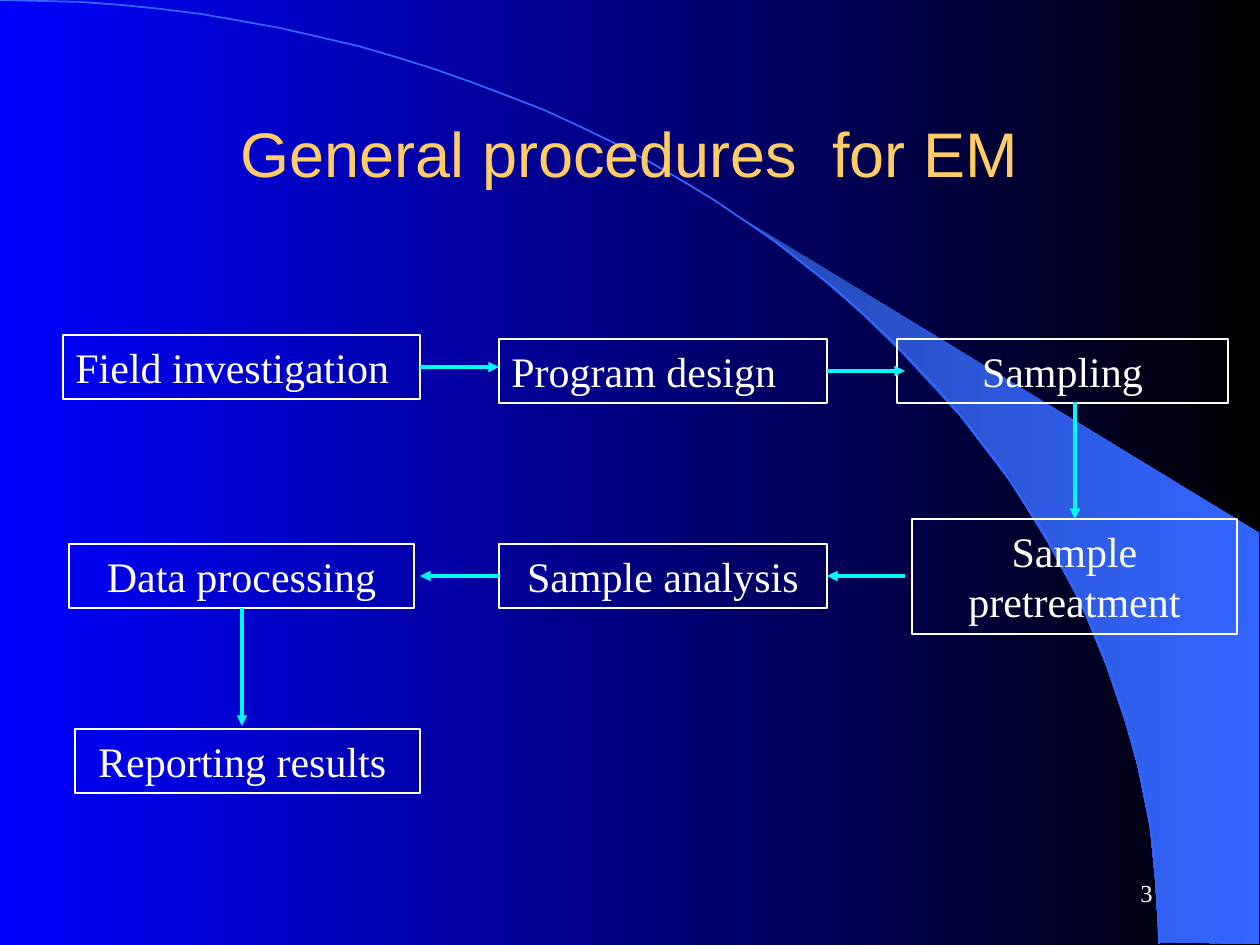
import math

from lxml import etree
from pptx import Presentation
from pptx import util as u
from pptx.dml.color import RGBColor
from pptx.enum import shapes, text
from pptx.oxml import ns

PX = 914400 / 126
BLUE = RGBColor(0x00, 0x00, 0xFF)
BLACK = RGBColor(0x00, 0x00, 0x00)
DEEP = RGBColor(0x24, 0x49, 0xB6)
SKY = RGBColor(0x33, 0x66, 0xFF)
GOLD = RGBColor(0xFF, 0xCC, 0x66)
WHITE = RGBColor(0xFF, 0xFF, 0xFF)
CYAN = RGBColor(0x00, 0xF9, 0xF9)
LEFT, CENTER, RIGHT = text.PP_ALIGN.LEFT, text.PP_ALIGN.CENTER, text.PP_ALIGN.RIGHT


def set_gradient(fill, start, end):
    fill.gradient()
    fill.gradient_angle = 0
    for stop, color in zip(fill.gradient_stops, (start, end)):
        stop.color.rgb = color


def add_text(sp, words, size, font, color, align, anchor):
    tf = sp.text_frame
    tf.word_wrap = True
    tf.vertical_anchor = anchor
    p = tf.paragraphs[0]
    p.alignment = align
    r = p.add_run()
    r.text = words
    r.font.size = u.Pt(size)
    r.font.name = font
    r.font.color.rgb = color


prs = Presentation()
prs.slide_width, prs.slide_height = u.Inches(10), u.Inches(7.5)
s = prs.slides.add_slide(prs.slide_layouts[6])
set_gradient(s.background.fill, BLUE, BLACK)

wedge = [(1159, 942), (1259, 944), (1259, 533), (742, 218), (786, 251), (823, 280),
         (863, 315), (902, 353), (960, 416), (1012, 484), (1048, 543), (1081, 604),
         (1106, 665), (1125, 721), (1138, 767), (1150, 827), (1155, 877)]
fb = s.shapes.build_freeform(*wedge[0], scale=PX)
fb.add_line_segments(wedge[1:], close=True)
sp = fb.convert_to_shape()
sp.shadow.inherit = False
set_gradient(sp.fill, DEEP, SKY)
sp.line.fill.background()

angles = [math.radians(a) for a in range(2, 91, 2)]
arc = [(round(1159 * math.sin(a)), round(944 * (1 - math.cos(a)))) for a in angles]
fb = s.shapes.build_freeform(0, 0, scale=PX)
fb.add_line_segments(arc, close=False)
sp = fb.convert_to_shape()
sp.shadow.inherit = False
sp.fill.background()
sp.line.color.rgb = SKY
sp.line.width = u.Pt(1)

labels = [
    ((94, 73, 1071, 158), "General procedures  for EM", 36, "Arial", GOLD, CENTER),
    ((903, 861, 262, 63), "3", 14, "Times New Roman", WHITE, RIGHT),
]
for box, words, size, font, color, align in labels:
    sp = s.shapes.add_textbox(*[u.Emu(round(n * PX)) for n in box])
    add_text(sp, words, size, font, color, align, text.MSO_ANCHOR.MIDDLE)

steps = [
    ((63, 335, 357, 64), "Field investigation", LEFT),
    ((499, 339, 328, 64), "Program design", LEFT),
    ((897, 339, 331, 64), "Sampling", CENTER),
    ((912, 519, 325, 115), "Sample pretreatment", CENTER),
    ((499, 544, 328, 64), "Sample analysis", CENTER),
    ((69, 544, 345, 64), "Data processing", CENTER),
    ((75, 729, 345, 64), "Reporting results ", CENTER),
]
for box, words, align in steps:
    sp = s.shapes.add_shape(shapes.MSO_SHAPE.RECTANGLE, *[u.Emu(round(n * PX)) for n in box])
    sp.shadow.inherit = False
    sp.fill.background()
    sp.line.color.rgb = WHITE
    sp.line.width = u.Pt(1)
    add_text(sp, words, 24, "Times New Roman", WHITE, align, text.MSO_ANCHOR.TOP)

arrows = [
    (420, 367, 499, 367),
    (827, 371, 905, 371),
    (1075, 402, 1075, 519),
    (905, 576, 827, 576),
    (499, 576, 420, 576),
    (242, 608, 242, 726),
]
for ends in arrows:
    c = s.shapes.add_connector(shapes.MSO_CONNECTOR.STRAIGHT, *[u.Emu(round(n * PX)) for n in ends])
    c.line.color.rgb = CYAN
    c.line.width = u.Pt(2)
    etree.SubElement(c.line._get_or_add_ln(), ns.qn("a:tailEnd"), type="triangle")
    etree.SubElement(c._element.spPr, ns.qn("a:effectLst"))

prs.save("out.pptx")
